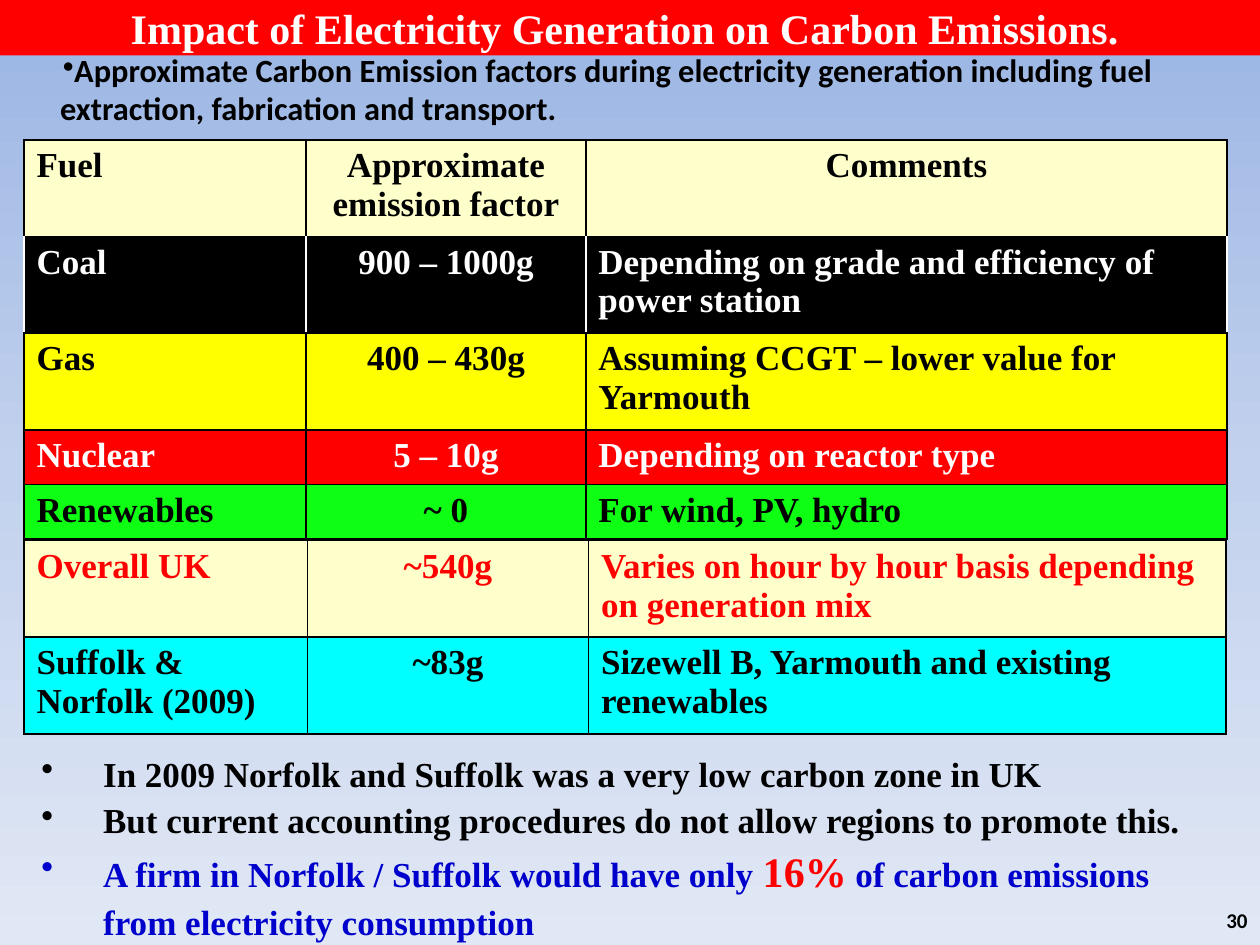
from copy import deepcopy

from lxml.etree import SubElement
from pptx import Presentation
from pptx.dml.color import RGBColor
from pptx.enum.shapes import MSO_SHAPE
from pptx.enum.text import MSO_ANCHOR, PP_ALIGN
from pptx.oxml.ns import qn
from pptx.util import Inches, Pt

COLUMNS, ROWS = 100, 75  # grid over the slide
SERIF, SANS = "Times New Roman", "Calibri"
BLACK, WHITE, RED, BLUE = "000000", "FFFFFF", "FF0000", "0000CC"
CREAM, YELLOW, GREEN, CYAN = "FFFFCC", "FFFF00", "0EFE14", "00FFFF"


def rgb(value):
    return RGBColor.from_string(value)


class SlideBuilder:
    def __init__(self, presentation):
        self.width = presentation.slide_width
        self.height = presentation.slide_height
        self.slide = presentation.slides.add_slide(presentation.slide_layouts[6])
        self.shapes = self.slide.shapes

    def across(self, columns):
        return int(self.width * columns / COLUMNS)

    def down(self, rows):
        return int(self.height * rows / ROWS)

    def area(self, left, top, width, height):
        return self.across(left), self.down(top), self.across(width), self.down(height)

    def background(self, stops):
        fill = self.slide.background.fill
        fill.gradient()
        fill.gradient_angle = 270
        stop_list = self.slide.element.find(".//" + qn("a:gsLst"))
        while len(stop_list) < len(stops):
            stop_list.append(deepcopy(stop_list[0]))
        for stop, (position, color) in zip(fill.gradient_stops, stops):
            stop.position = position
            stop.color.rgb = rgb(color)

    def add_runs(self, paragraph, runs, font=SERIF, **formats):
        """Add (text, size, color) runs and set the paragraph's formats."""
        for name, value in formats.items():
            setattr(paragraph, name, value)
        for text, size, color in runs:
            run = paragraph.add_run()
            run.text = text
            for name, value in {"name": font, "size": Pt(size), "bold": True}.items():
                setattr(run.font, name, value)
            run.font.color.rgb = rgb(color)

    def bullet(self, paragraph, margin, indent):
        properties = paragraph._p.get_or_add_pPr()
        properties.set("marL", str(Inches(margin)))
        properties.set("indent", str(Inches(indent)))
        SubElement(properties, qn("a:buChar")).set("char", "•")

    def text_box(self, area, anchor=MSO_ANCHOR.TOP):
        frame = self.shapes.add_textbox(*self.area(*area)).text_frame
        frame.word_wrap = True
        frame.vertical_anchor = anchor
        return frame

    def bullets(self, area, items, margin, indent, **formats):
        frame = self.text_box(area)
        for index, runs in enumerate(items):
            paragraph = frame.add_paragraph() if index else frame.paragraphs[0]
            self.add_runs(paragraph, runs, **formats)
            self.bullet(paragraph, margin, indent)

    def banner(self, area, text, color):
        shape = self.shapes.add_shape(MSO_SHAPE.RECTANGLE, *self.area(*area))
        shape.shadow.inherit = False
        shape.fill.solid()
        shape.fill.fore_color.rgb = rgb(color)
        shape.line.fill.background()
        frame = shape.text_frame
        for side in ("left", "top", "right", "bottom"):
            setattr(frame, f"margin_{side}", 0)
        frame.vertical_anchor = MSO_ANCHOR.MIDDLE
        self.add_runs(frame.paragraphs[0], [(text, 24, WHITE)],
                      alignment=PP_ALIGN.CENTER)

    def borders(self, cell, side_color):
        properties = cell._tc.get_or_add_tcPr()
        for side, color in zip("LRTB", (side_color, side_color, BLACK, BLACK)):
            line = SubElement(properties, qn(f"a:ln{side}"), w=str(Pt(1)))
            fill = SubElement(line, qn("a:solidFill"))
            SubElement(fill, qn("a:srgbClr"), val=color)

    def table(self, area, widths, heights, records, centred_header=False):
        """Each record is (texts, fill, text color)."""
        frame = self.shapes.add_table(len(records), len(widths), *self.area(*area))
        table = frame.table
        table.first_row = table.horz_banding = False
        for column, width in zip(table.columns, widths):
            column.width = self.across(width)
        for row, height in zip(table.rows, heights):
            row.height = self.down(height)
        frame.height = self.down(area[3])
        for r, (texts, fill, color) in enumerate(records):
            for c, text in enumerate(texts):
                cell = table.cell(r, c)
                self.borders(cell, WHITE if fill == BLACK else BLACK)
                cell.fill.solid()
                cell.fill.fore_color.rgb = rgb(fill)
                centred = c == 1 or (centred_header and r == 0 and c > 0)
                self.add_runs(cell.text_frame.paragraphs[0], [(text, 20, color)],
                              alignment=PP_ALIGN.CENTER if centred else PP_ALIGN.LEFT)


def main():
    presentation = Presentation()
    presentation.slide_width, presentation.slide_height = Inches(10), Inches(7.5)
    builder = SlideBuilder(presentation)
    builder.background([(0, "9AB5E4"), (0.5, "C2D1ED"), (1, "E1E8F5")])

    # Introduction, slide number and title
    builder.bullets(
        (0, 3.7, 96.6, 6.8),
        [[("Approximate Carbon Emission factors during electricity generation "
           "including fuel extraction, fabrication and transport.", 18.5, BLACK)]],
        0.38, 0.02, font=SANS, space_before=Pt(2), line_spacing=0.96)
    number = builder.text_box((76.7, 71, 23.3, 4), MSO_ANCHOR.MIDDLE)
    builder.add_runs(number.paragraphs[0], [("30", 12, BLACK)], SANS,
                     alignment=PP_ALIGN.RIGHT)
    builder.banner((0, 0, 100, 4.4),
                   "Impact of Electricity Generation on Carbon Emissions. ", RED)

    # Emission factors by fuel
    builder.table(
        (1.9, 11.1, 95.5, 31.7), (22.4, 22.2, 50.9), (6.2,) + (4.1,) * 4,
        [(("Fuel", "Approximate emission factor", "Comments"), CREAM, BLACK),
         (("Coal", "900 – 1000g", "Depending on grade and efficiency of power station"),
          BLACK, WHITE),
         (("Gas", "400 – 430g", "Assuming CCGT – lower value for Yarmouth"),
          YELLOW, BLACK),
         (("Nuclear", "5 – 10g", "Depending on reactor type"), RED, WHITE),
         (("Renewables", "~ 0", "For wind, PV, hydro"), GREEN, BLACK)],
        centred_header=True)

    # National and regional averages
    builder.table(
        (1.9, 42.9, 95.4, 15.3), (22.5, 22.3, 50.6), (7.65,) * 2,
        [(("Overall UK", "~540g",
           "Varies on hour by hour basis depending on generation mix"), CREAM, RED),
         (("Suffolk & Norfolk (2009)", "~83g",
           "Sizewell B, Yarmouth and existing renewables"), CYAN, BLACK)])

    # Conclusions
    builder.bullets(
        (2.3, 58.9, 93.5, 18.5),
        [[("In 2009 Norfolk and Suffolk was a very low carbon zone in UK", 20, BLACK)],
         [("But current accounting procedures do not allow regions to promote this.",
           20, BLACK)],
         [("A firm in Norfolk / Suffolk would have only ", 20, BLUE),
          ("16%", 24, RED),
          (" of carbon emissions from electricity consumption", 20, BLUE)]],
        0.49, -0.49, line_spacing=1.1)

    presentation.save("out.pptx")


if __name__ == "__main__":
    main()
